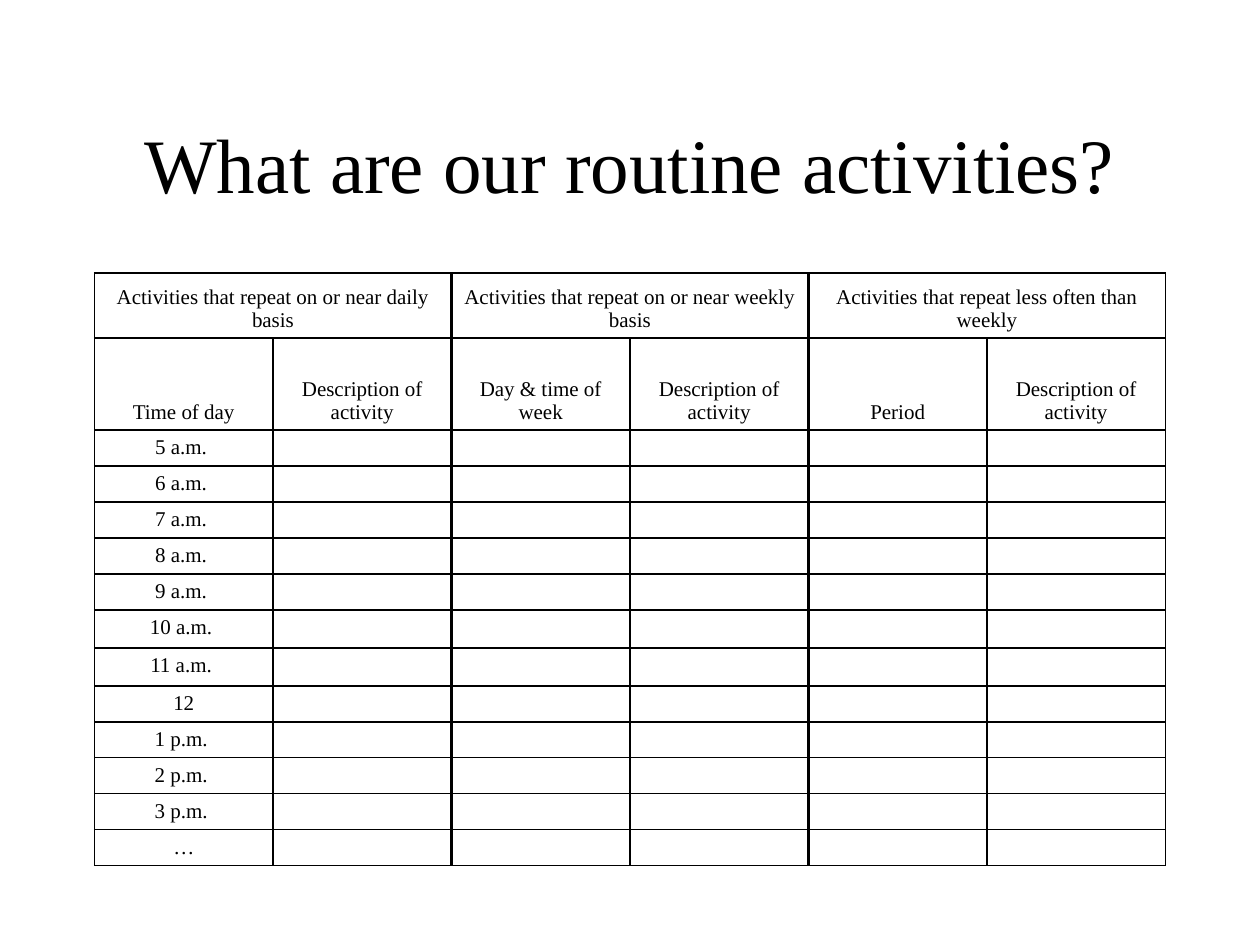
from dataclasses import dataclass

from lxml.etree import SubElement
from pptx import Presentation
from pptx.dml.color import RGBColor
from pptx.enum.text import MSO_ANCHOR, MSO_AUTO_SIZE, PP_ALIGN
from pptx.oxml import parse_xml
from pptx.oxml.ns import nsdecls, qn
from pptx.slide import Slide
from pptx.table import Table, _Cell
from pptx.text.text import _Paragraph
from pptx.util import Pt


@dataclass(frozen=True)
class Theme:
    font: str = "Times New Roman"
    ink: str = "000000"
    title_size: float = 44
    cell_size: float = 12
    thin: float = 1
    thick: float = 2


@dataclass(frozen=True)
class ActivityGroup:
    heading: str
    when: str
    activity: str = "Description of activity"


@dataclass(frozen=True)
class TimeRow:
    label: str
    height: float = 20.57


THEME = Theme()
GROUPS = [
    ActivityGroup("Activities that repeat on or near daily basis", "Time of day"),
    ActivityGroup("Activities that repeat on or near weekly basis", "Day & time of week"),
    ActivityGroup("Activities that repeat less often than weekly", "Period"),
]
TIMES = [
    *(TimeRow(f"{hour} a.m. ") for hour in range(5, 10)),
    *(TimeRow(f"{hour} a.m. ", 21.7) for hour in (10, 11)),
    TimeRow("12"),
    *(TimeRow(f"{hour} p.m. ") for hour in range(1, 4)),
    TimeRow("…"),
]
GROUP_SPAN = 2
COLUMNS = GROUP_SPAN * len(GROUPS)
HEADER_HEIGHTS = [37.2, 52.6]
LEFT, WIDTH = 54, 612
TITLE_TOP, TITLE_HEIGHT = 48, 90
TABLE_TOP = 156
CELL_MARGIN = 3.4


def style_paragraph(paragraph: _Paragraph, size: float) -> None:
    paragraph.alignment = PP_ALIGN.CENTER
    paragraph.font.name = THEME.font
    paragraph.font.size = Pt(size)
    paragraph.font.color.rgb = RGBColor.from_string(THEME.ink)


def add_title(slide: Slide, text: str) -> None:
    title = slide.shapes.title
    title.left, title.top = Pt(LEFT), Pt(TITLE_TOP)
    title.width, title.height = Pt(WIDTH), Pt(TITLE_HEIGHT)
    frame = title.text_frame
    frame.text = text
    frame.auto_size = MSO_AUTO_SIZE.NONE
    frame.vertical_anchor = MSO_ANCHOR.MIDDLE
    style_paragraph(frame.paragraphs[0], THEME.title_size)


def edge_width(edge: int) -> float:
    """Width of a vertical rule; the rules between activity groups are thick."""
    between_groups = 0 < edge < COLUMNS and edge % GROUP_SPAN == 0
    return THEME.thick if between_groups else THEME.thin


def set_borders(cell: _Cell, left: float, right: float) -> None:
    widths = {"lnL": left, "lnR": right, "lnT": THEME.thin, "lnB": THEME.thin}
    properties = cell._tc.get_or_add_tcPr()
    for position, (side, width) in enumerate(widths.items()):
        border = parse_xml(
            f'<a:{side} {nsdecls("a")} w="{Pt(width)}"><a:solidFill>'
            f'<a:srgbClr val="{THEME.ink}"/></a:solidFill></a:{side}>'
        )
        properties.insert(position, border)


def fill_cell(cell: _Cell, text: str, column: int, anchor: MSO_ANCHOR) -> None:
    cell.fill.background()
    cell.margin_top = cell.margin_bottom = Pt(CELL_MARGIN)
    cell.vertical_anchor = anchor
    paragraph = cell.text_frame.paragraphs[0]
    if text:
        paragraph.text = text
    else:
        # Without a run, the end mark decides the height of the line.
        SubElement(paragraph._p, qn("a:endParaRPr"), sz=str(THEME.cell_size * 100))
    style_paragraph(paragraph, THEME.cell_size)
    set_borders(cell, edge_width(column), edge_width(column + 1))


def table_texts() -> list[list[str]]:
    headings = [text for group in GROUPS for text in (group.heading, "")]
    subheadings = [text for group in GROUPS for text in (group.when, group.activity)]
    hours = [[time.label] + [""] * (COLUMNS - 1) for time in TIMES]
    return [headings, subheadings, *hours]


def add_schedule(slide: Slide) -> Table:
    heights = HEADER_HEIGHTS + [time.height for time in TIMES]
    schedule = slide.shapes.add_table(
        len(heights), COLUMNS, Pt(LEFT), Pt(TABLE_TOP), Pt(WIDTH), Pt(sum(heights))
    ).table
    schedule.first_row = schedule.horz_banding = False
    for row, height in zip(schedule.rows, heights):
        row.height = Pt(height)
    for row, texts in enumerate(table_texts()):
        anchor = MSO_ANCHOR.BOTTOM if row < len(HEADER_HEIGHTS) else MSO_ANCHOR.TOP
        for column, text in enumerate(texts):
            fill_cell(schedule.cell(row, column), text, column, anchor)
    for first in range(0, COLUMNS, GROUP_SPAN):
        last = first + GROUP_SPAN - 1
        schedule.cell(0, first).merge(schedule.cell(0, last))
    return schedule


def main() -> None:
    presentation = Presentation()
    presentation.slide_width, presentation.slide_height = Pt(720), Pt(540)
    slide = presentation.slides.add_slide(
        presentation.slide_layouts.get_by_name("Title Only")
    )
    add_title(slide, "What are our routine activities?")
    add_schedule(slide)
    presentation.save("out.pptx")


if __name__ == "__main__":
    main()
